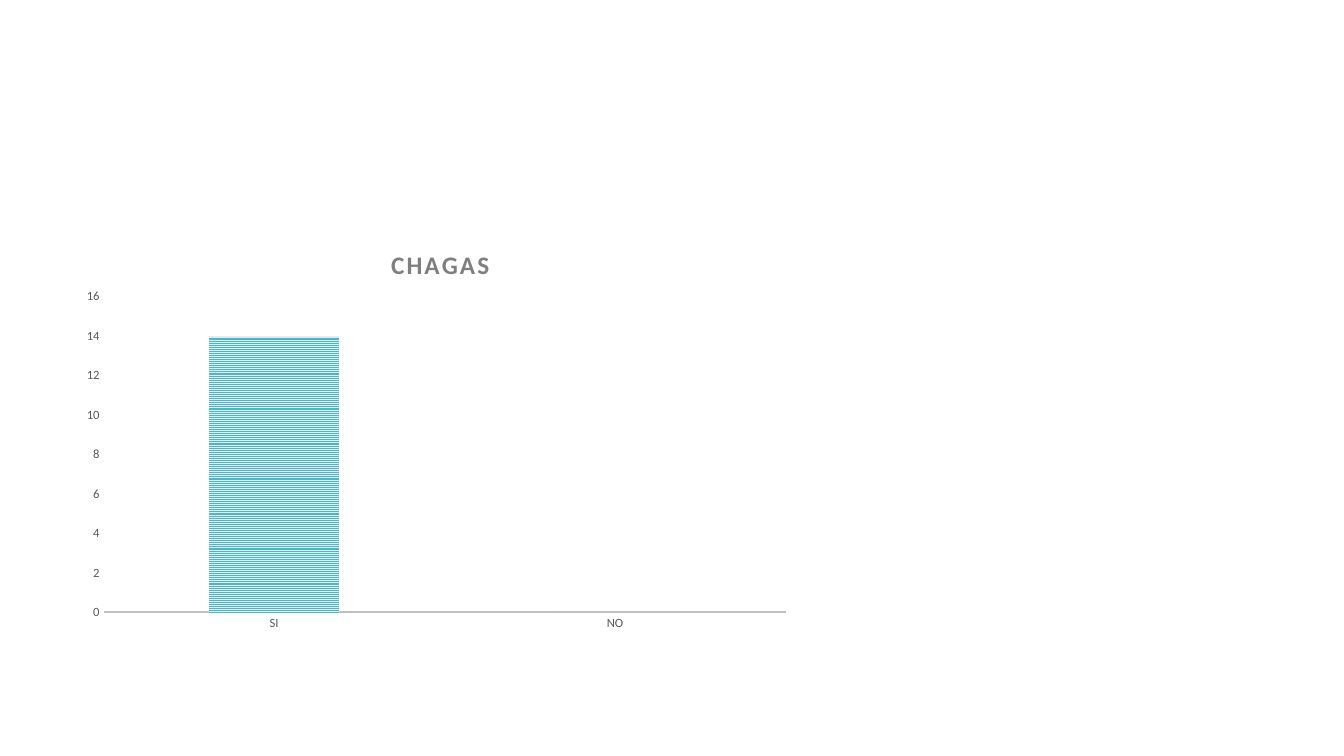
from lxml import etree
from pptx import Presentation
from pptx.chart.data import CategoryChartData
from pptx.dml.color import RGBColor
from pptx.enum.chart import XL_CHART_TYPE, XL_TICK_MARK
from pptx.enum.dml import MSO_PATTERN
from pptx.util import Pt

PX = 9525
COLUMN = XL_CHART_TYPE.COLUMN_CLUSTERED
NO_TICK = XL_TICK_MARK.NONE
STRIPES = MSO_PATTERN.NARROW_HORIZONTAL
BLACK = RGBColor(0x00, 0x00, 0x00)
GREY = RGBColor(0x7F, 0x7F, 0x7F)
DARK = RGBColor(0x59, 0x59, 0x59)
PALE = RGBColor(0xBF, 0xBF, 0xBF)
TEAL = RGBColor(0x50, 0xB4, 0xC8)
MIST = RGBColor(0xDC, 0xF0, 0xF4)
NS = "http://schemas.openxmlformats.org/drawingml/2006/chart"


def style(font, size, color, bold=False):
    font.name = "Calibri"
    font.size = Pt(size)
    font.bold = bold
    font.color.rgb = color


def write(frame, text, size=18, color=GREY, bold=False, space=0):
    run = frame.paragraphs[0].add_run()
    run.text = text
    style(run.font, size, color, bold)
    run._r.get_or_add_rPr().set("spc", str(space))


def place(part, index, **spots):
    """Give a chart part a fixed place, as fractions of the chart."""
    for old in part.findall(f"{{{NS}}}layout"):
        part.remove(old)
    layout = etree.Element(f"{{{NS}}}layout")
    manual = etree.SubElement(layout, f"{{{NS}}}manualLayout")
    for name, value in spots.items():
        etree.SubElement(manual, f"{{{NS}}}{name}").set("val", str(value))
    part.insert(index, layout)


class Deck:
    def __init__(self, width, height):
        self.prs = Presentation()
        self.prs.slide_width = width * PX
        self.prs.slide_height = height * PX
        self.slide = self.prs.slides.add_slide(self.prs.slide_layouts[6])

    def axis(self, axis):
        axis.has_major_gridlines = False
        axis.major_tick_mark = axis.minor_tick_mark = NO_TICK
        style(axis.tick_labels.font, 9, DARK)
        return axis.format.line

    def chart(self, box, title, cats, values):
        data = CategoryChartData()
        data.categories = cats
        data.add_series("Series 1", values)
        spot = [n * PX for n in box]
        chart = self.slide.shapes.add_chart(COLUMN, *spot, data).chart
        style(chart.font, 10, BLACK)
        chart.has_legend = False

        # Title
        chart.has_title = True
        head = chart.chart_title
        write(head.text_frame, title, bold=True, space=150)
        place(head._element, 1, xMode="edge", yMode="edge", x=0.43, y=0.05)

        # Axes
        line = self.axis(chart.category_axis)
        line.color.rgb = PALE
        line.width = Pt(1.5)
        self.axis(chart.value_axis).fill.background()
        chart.value_axis.minimum_scale = 0
        chart.value_axis.maximum_scale = 16
        chart.value_axis.major_unit = 2

        # Columns
        plot = chart.plots[0]
        plot.vary_by_categories = False
        plot.gap_width = 164
        plot.overlap = -22
        fill = plot.series[0].format.fill
        fill.patterned()
        fill.pattern = STRIPES
        fill.fore_color.rgb = TEAL
        fill.back_color.rgb = MIST
        area = plot._element.getparent()
        place(area, 0, layoutTarget="inner", xMode="edge", yMode="edge",
              x=0.04, y=0.18, w=0.94, h=0.76)


def main():
    deck = Deck(1280, 720)
    deck.chart((71, 211, 691, 396), "CHAGAS", ("SI", "NO"), (14, 0))
    deck.prs.save("out.pptx")


if __name__ == "__main__":
    main()
